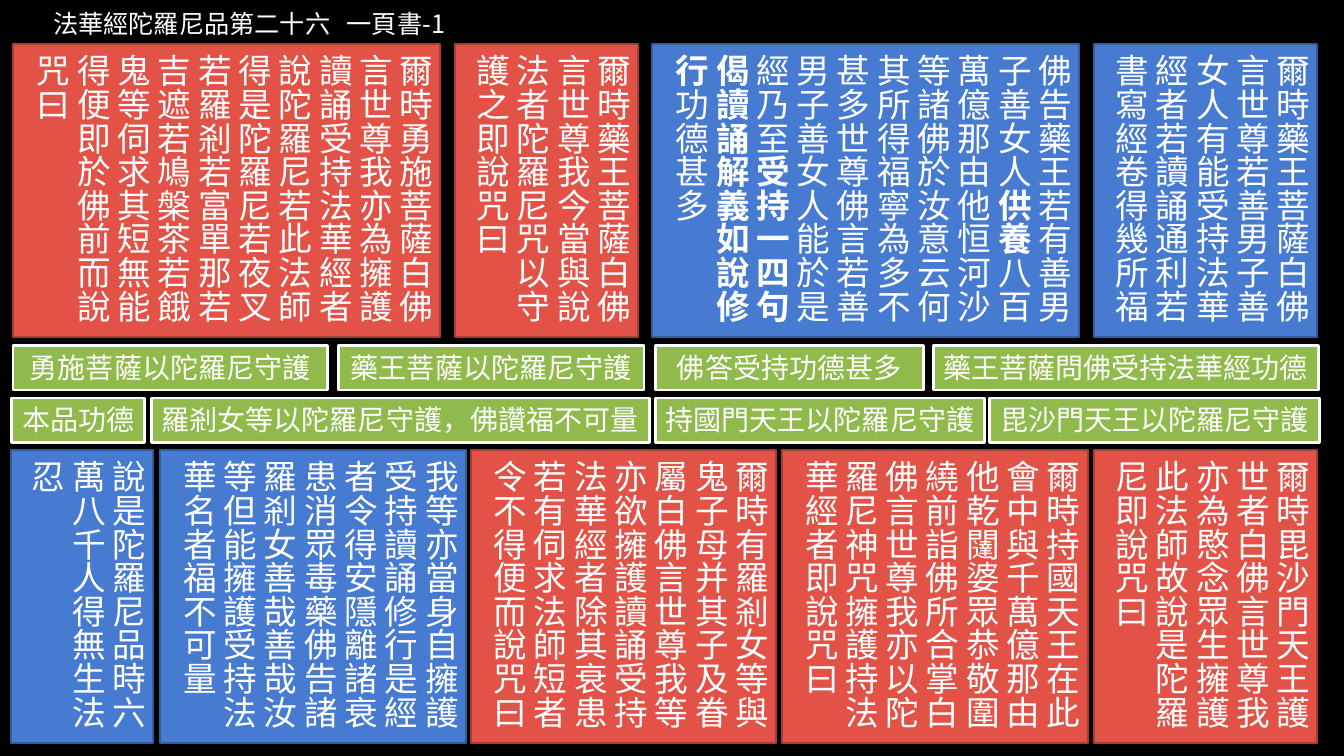
import pptx
import pptx.dml.color
import pptx.enum.shapes
import pptx.enum.text
import pptx.oxml.ns
import pptx.util
from lxml import etree
from pptx.util import Cm

COLORS = {
    "background": "000000", "text": "FFFFFF",
    "blue": "477BD1", "blue edge": "355B9B",
    "red": "E25247", "red edge": "A73D35",
    "green": "90BA4C", "green edge": "FFFFFF",
}
FONT = "Noto Sans CJK SC"
LINE_HEIGHT = 1.2

PASSAGE_HEIGHT, LABEL_HEIGHT = 7.37, 1.12
UPPER_TOP, LOWER_TOP = 1.12, 11.35
UPPER_LABEL_TOP, LOWER_LABEL_TOP = 8.71, 10.03

# Passages: left, width, color, text with *bold* parts
UPPER_PASSAGES = [
    (27.56, 5.64, "blue", "爾時藥王菩薩白佛言世尊若善男子善女人有能受持法華經者若讀誦通利若書寫經卷得幾所福"),
    (16.43, 10.77, "blue", "佛告藥王若有善男子善女人*供養*八百萬億那由他恒河沙等諸佛於汝意云何其所得福寧為多不"
                           "甚多世尊佛言若善男子善女人能於是經乃至*受持一四句偈讀誦解義如說修行*功德甚多"),
    (11.46, 4.62, "red", "爾時藥王菩薩白佛言世尊我今當與說法者陀羅尼咒以守護之即說咒曰"),
    (0.33, 10.77, "red", "爾時勇施菩薩白佛言世尊我亦為擁護讀誦受持法華經者說陀羅尼若此法師得是陀羅尼若夜叉"
                         "若羅剎若富單那若吉遮若鳩槃茶若餓鬼等伺求其短無能得便即於佛前而說咒曰"),
]
LOWER_PASSAGES = [
    (27.56, 5.64, "red", "爾時毘沙門天王護世者白佛言世尊我亦為愍念眾生擁護此法師故說是陀羅尼即說咒曰"),
    (19.71, 7.7, "red", "爾時持國天王在此會中與千萬億那由他乾闥婆眾恭敬圍繞前詣佛所合掌白佛言世尊我亦以"
                        "陀羅尼神咒擁護持法華經者即說咒曰"),
    (11.86, 7.7, "red", "爾時有羅剎女等與鬼子母并其子及眷屬白佛言世尊我等亦欲擁護讀誦受持法華經者除其衰患"
                        "若有伺求法師短者令不得便而說咒曰"),
    (4.04, 7.7, "blue", "我等亦當身自擁護受持讀誦修行是經者令得安隱離諸衰患消眾毒藥佛告諸羅剎女善哉善哉汝等"
                        "但能擁護受持法華名者福不可量"),
    (0.28, 3.58, "blue", "說是陀羅尼品時六萬八千人得無生法忍"),
]
# Labels: left, width, text
UPPER_LABELS = [
    (23.52, 9.7, "藥王菩薩問佛受持法華經功德"),
    (16.51, 6.76, "佛答受持功德甚多"),
    (8.53, 7.7, "藥王菩薩以陀羅尼守護"),
    (0.33, 7.92, "勇施菩薩以陀羅尼守護"),
]
LOWER_LABELS = [
    (24.94, 8.31, "毘沙門天王以陀羅尼守護"),
    (16.51, 8.31, "持國門天王以陀羅尼守護"),
    (3.81, 12.55, "羅剎女等以陀羅尼守護，佛讚福不可量"),
    (0.3, 3.35, "本品功德"),
]


def color(name):
    return pptx.dml.color.RGBColor.from_string(COLORS[name])


def write_text(paragraph, text, size, align="LEFT"):
    """Fill a paragraph; parts between asterisks are bold."""
    paragraph.alignment = getattr(pptx.enum.text.PP_ALIGN, align)
    paragraph.line_spacing = pptx.util.Pt(size * LINE_HEIGHT)
    for index, part in enumerate(text.split("*")):
        run = paragraph.add_run()
        run.text = part
        run.font.name = FONT
        run.font.size = pptx.util.Pt(size)
        run.font.bold = index % 2 == 1
        run.font.color.rgb = color("text")
        east_asian = etree.SubElement(run.font._element, pptx.oxml.ns.qn("a:ea"))
        east_asian.set("typeface", FONT)


class SutraSlide:
    def __init__(self, presentation):
        self.slide = presentation.slides.add_slide(presentation.slide_layouts[6])
        fill = self.slide.background.fill
        fill.solid()
        fill.fore_color.rgb = color("background")

    def title(self, text, tab):
        shape = self.slide.shapes.add_textbox(Cm(1.09), Cm(0.08), Cm(13.11), Cm(1.02))
        shape.text_frame.word_wrap = True
        paragraph = shape.text_frame.paragraphs[0]
        properties = paragraph._p.get_or_add_pPr()
        tabs = etree.SubElement(properties, pptx.oxml.ns.qn("a:tabLst"))
        etree.SubElement(tabs, pptx.oxml.ns.qn("a:tab"), pos=str(Cm(tab)), algn="l")
        write_text(paragraph, text, size=18)

    def box(self, left, top, width, height, fill, line_width):
        shape = self.slide.shapes.add_shape(
            pptx.enum.shapes.MSO_SHAPE.RECTANGLE, Cm(left), Cm(top), Cm(width), Cm(height))
        shape.shadow.inherit = False
        shape.fill.solid()
        shape.fill.fore_color.rgb = color(fill)
        shape.line.color.rgb = color(fill + " edge")
        shape.line.width = pptx.util.Pt(line_width)
        shape.text_frame.vertical_anchor = pptx.enum.text.MSO_ANCHOR.TOP
        return shape

    def passage(self, left, top, width, fill, text):
        """Add a box whose text runs down in columns from the right."""
        shape = self.box(left, top, width, PASSAGE_HEIGHT, fill, line_width=1.5)
        shape.text_frame.word_wrap = True
        shape.element.txBody.bodyPr.set("vert", "eaVert")
        write_text(shape.text_frame.paragraphs[0], text, size=24)

    def label(self, left, top, width, text):
        shape = self.box(left, top, width, LABEL_HEIGHT, "green", line_width=2)
        shape.text_frame.word_wrap = False
        write_text(shape.text_frame.paragraphs[0], text, size=20, align="CENTER")


def main():
    presentation = pptx.Presentation()
    presentation.slide_width, presentation.slide_height = Cm(33.87), Cm(19.05)
    sutra = SutraSlide(presentation)
    sutra.title("法華經陀羅尼品第二十六\t一頁書-1", tab=7.4)
    for top, passages in ((UPPER_TOP, UPPER_PASSAGES), (LOWER_TOP, LOWER_PASSAGES)):
        for left, width, fill, text in passages:
            sutra.passage(left, top, width, fill, text)
    for top, labels in ((UPPER_LABEL_TOP, UPPER_LABELS), (LOWER_LABEL_TOP, LOWER_LABELS)):
        for left, width, text in labels:
            sutra.label(left, top, width, text)
    presentation.save("out.pptx")


if __name__ == "__main__":
    main()
